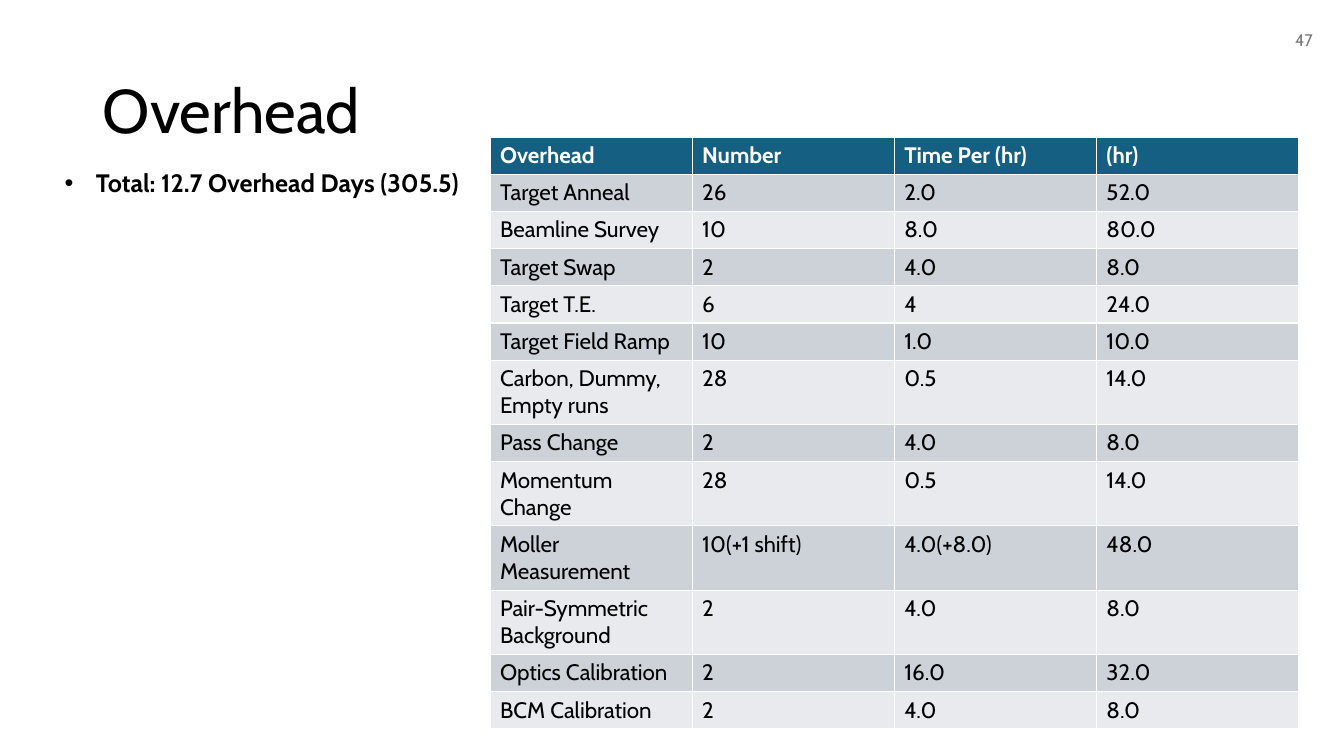
from dataclasses import dataclass

from lxml.etree import SubElement
from pptx import Presentation
from pptx.dml.color import RGBColor
from pptx.enum.text import MSO_ANCHOR, MSO_AUTO_SIZE, PP_ALIGN
from pptx.oxml.ns import qn
from pptx.util import Emu, Pt

EMU_PER_PX = 9144  # 100 px to the inch


def px(length):
    return Emu(length * EMU_PER_PX)


@dataclass(frozen=True)
class Theme:
    font: str = "Cabin"
    ink: str = "000000"
    muted: str = "797979"
    header_ink: str = "FFFFFF"
    header_fill: str = "156082"
    bands: tuple = ("CCD2D8", "E8EAED")
    title_size: int = 44
    list_size: int = 18
    table_size: int = 16
    number_size: int = 12


class SlideBuilder:
    def __init__(self, slide, theme):
        self.slide = slide
        self.theme = theme

    def style(self, paragraph, size, color, bold=False):
        font = paragraph.font
        font.name, font.size, font.bold = self.theme.font, Pt(size), bold
        font.color.rgb = RGBColor.from_string(color)

    def place(self, shape, box):
        shape.left, shape.top, shape.width, shape.height = map(px, box)

    def title(self, text, box):
        heading = self.slide.shapes.title
        self.place(heading, box)
        frame = heading.text_frame
        frame.text = text
        frame.auto_size = MSO_AUTO_SIZE.NONE
        frame.vertical_anchor = MSO_ANCHOR.MIDDLE
        paragraph = frame.paragraphs[0]
        paragraph.alignment = PP_ALIGN.LEFT
        paragraph.line_spacing = 0.9
        self.style(paragraph, self.theme.title_size, self.theme.ink)

    def bullets(self, items, box, indent):
        body = self.slide.placeholders[1]
        self.place(body, box)
        frame = body.text_frame
        frame.text = "\n".join(items)
        frame.auto_size = MSO_AUTO_SIZE.NONE
        for paragraph in frame.paragraphs:
            paragraph.space_before = Pt(0)
            self.style(paragraph, self.theme.list_size, self.theme.ink, bold=True)
            properties = paragraph._p.get_or_add_pPr()
            properties.set("marL", str(px(indent)))
            properties.set("indent", str(-px(indent)))
            bullet_font = SubElement(properties, qn("a:buFont"))
            bullet_font.set("typeface", "Arial")
            SubElement(properties, qn("a:buChar")).set("char", "•")
            # Bullet settings come before the paragraph's default font
            properties.append(properties.find(qn("a:defRPr")))

    def table(self, rows, box, row_height, tall_rows):
        theme = self.theme
        holder = self.slide.shapes.add_table(len(rows), len(rows[0]), *map(px, box))
        grid = holder.table
        for r, values in enumerate(rows):
            grid.rows[r].height = px(tall_rows.get(values[0], row_height))
            header = r == 0
            fill = theme.header_fill if header else theme.bands[(r - 1) % 2]
            ink = theme.header_ink if header else theme.ink
            for c, value in enumerate(values):
                cell = grid.cell(r, c)
                cell.text = value
                cell.fill.solid()
                cell.fill.fore_color.rgb = RGBColor.from_string(fill)
                self.style(cell.text_frame.paragraphs[0], theme.table_size, ink, header)
        holder.height = px(box[3])

    def page_number(self, text, box):
        frame = self.slide.shapes.add_textbox(*map(px, box)).text_frame
        frame.word_wrap = True
        frame.vertical_anchor = MSO_ANCHOR.MIDDLE
        frame.text = text
        paragraph = frame.paragraphs[0]
        paragraph.alignment = PP_ALIGN.RIGHT
        self.style(paragraph, self.theme.number_size, self.theme.muted)


OVERHEAD_ROWS = [
    ("Overhead", "Number", "Time Per (hr)", "(hr)"),
    ("Target Anneal", "26", "2.0", "52.0"),
    ("Beamline Survey", "10", "8.0", "80.0"),
    ("Target Swap", "2", "4.0", "8.0"),
    ("Target T.E.", "6", "4", "24.0"),
    ("Target Field Ramp", "10", "1.0", "10.0"),
    ("Carbon, Dummy, Empty runs", "28", "0.5", "14.0"),
    ("Pass Change", "2", "4.0", "8.0"),
    ("Momentum Change", "28", "0.5", "14.0"),
    ("Moller Measurement", "10(+1 shift)", "4.0(+8.0)", "48.0"),
    ("Pair-Symmetric Background", "2", "4.0", "8.0"),
    ("Optics Calibration", "2", "16.0", "32.0"),
    ("BCM Calibration", "2", "4.0", "8.0"),
]


def main():
    deck = Presentation()
    deck.slide_width, deck.slide_height = px(1333), px(750)
    slide = deck.slides.add_slide(deck.slide_layouts[1])
    builder = SlideBuilder(slide, Theme())

    # Heading and total
    builder.title("Overhead", (92, 40, 1150, 145))
    builder.bullets(["Total: 12.7 Overhead Days (305.5)"], (54, 161, 418, 101), indent=31)

    # Overhead breakdown
    builder.table(OVERHEAD_ROWS, (486, 136, 802, 583), row_height=31,
                  tall_rows={"Carbon, Dummy, Empty runs": 53})

    # Page number
    builder.page_number("47", (1012, 20, 300, 40))

    deck.save("out.pptx")


if __name__ == "__main__":
    main()
